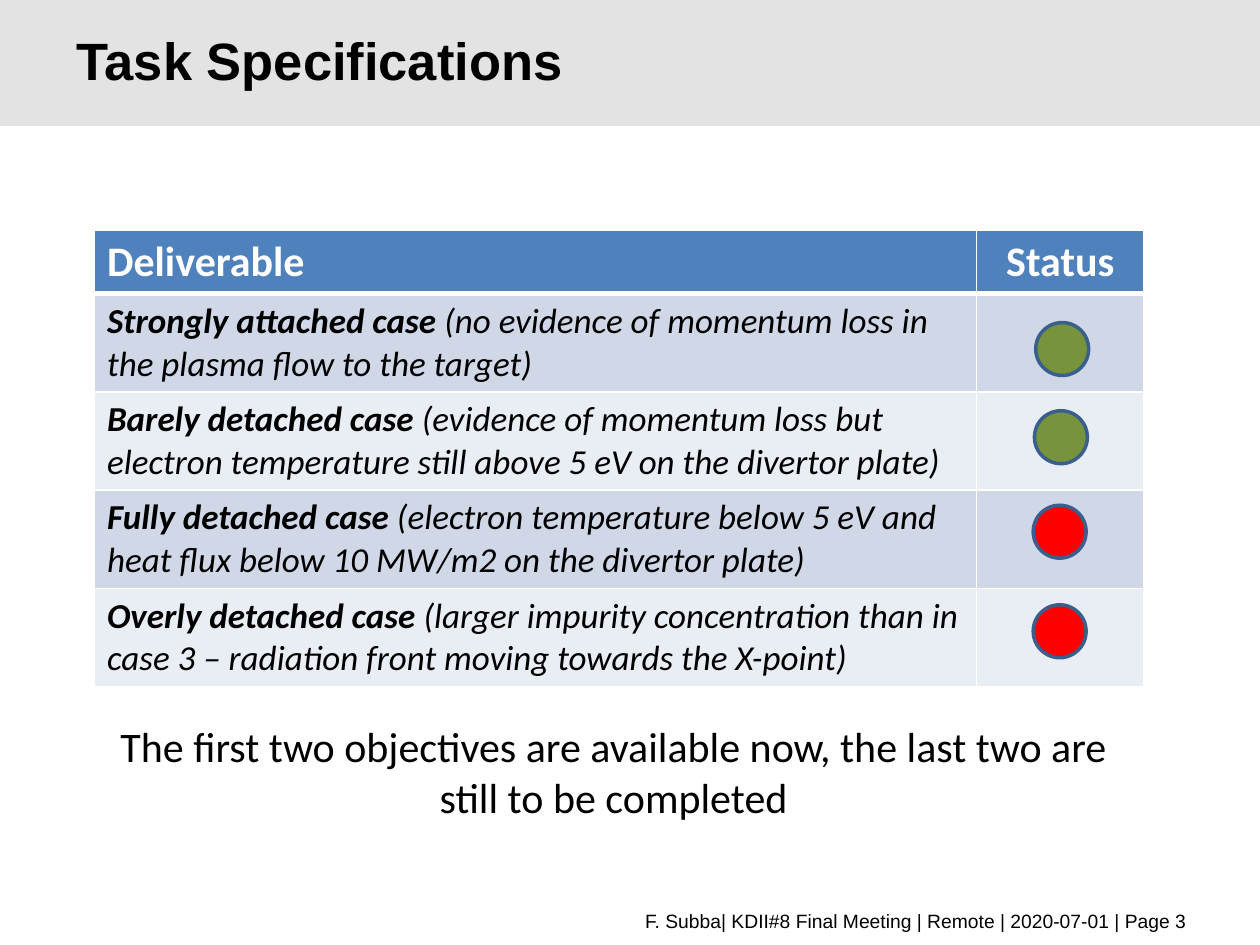
from pptx import Presentation
from pptx import util as u
from pptx.dml.color import RGBColor
from pptx.enum import shapes, text
from pptx.oxml import parse_xml
from pptx.oxml.ns import nsdecls

COLS, ROWS = 100, 75  # square grid over the slide
UNIT = u.Inches(10) // COLS

HUES = {
    "band": "E3E3E3", "ink": "000000", "white": "FFFFFF", "head": "4F81BD",
    "odd": "D0D8E8", "even": "E9EDF4", "done": "77933C", "open": "FF0000",
    "rim": "3A5F8C",
}

# Case, detail, state, and left and top of its dot from the table's corner
CASES = [
    ("Strongly attached case",
     "(no evidence of momentum loss in the plasma flow to the target)",
     "done", 74.7, 7.3),
    ("Barely detached case",
     "(evidence of momentum loss but electron temperature still above 5 eV "
     "on the divertor plate)", "done", 74.6, 14.3),
    ("Fully detached case",
     "(electron temperature below 5 eV and heat flux below 10 MW/m2 "
     "on the divertor plate)", "open", 74.5, 21.8),
    ("Overly detached case",
     "(larger impurity concentration than in case 3 – radiation front moving "
     "towards the X-point)", "open", 74.5, 29.7),
]


def span(n):
    return u.Emu(round(n * UNIT))


def hue(name):
    return RGBColor.from_string(HUES[name])


def paint(part, name):
    part.fill.solid()
    part.fill.fore_color.rgb = hue(name)


def add_run(para, words, size, face="Calibri", ink="ink", bold=False, slant=False):
    run = para.add_run()
    run.text = words
    font = run.font
    font.size, font.name = u.Pt(size), face
    font.bold, font.italic = bold, slant
    font.color.rgb = hue(ink)


def add_form(slide, kind, box, fill, rim=None):
    form = slide.shapes.add_shape(kind, *map(span, box))
    form.shadow.inherit = False
    paint(form, fill)
    if rim:
        form.line.color.rgb = hue(rim)
        form.line.width = u.Pt(2)
    else:
        form.line.fill.background()


def add_label(slide, box, words, size, face, align, anchor, bold=False):
    frame = slide.shapes.add_textbox(*map(span, box)).text_frame
    frame.word_wrap = True
    frame.vertical_anchor = anchor
    para = frame.paragraphs[0]
    para.alignment = align
    add_run(para, words, size, face, bold=bold)
    return para


def rule_cell(cell, base=1):
    """Draw white borders, with the bottom one as wide as asked."""
    props = cell._tc.get_or_add_tcPr()
    for spot, (side, width) in enumerate(zip("LRTB", (1, 1, 1, base))):
        props.insert(spot, parse_xml(
            f'<a:ln{side} {nsdecls("a")} w="{u.Pt(width)}"><a:solidFill>'
            f'<a:srgbClr val="{HUES["white"]}"/></a:solidFill></a:ln{side}>'))


def head_band(slide, box):
    x, y, w, h = box
    add_form(slide, shapes.MSO_SHAPE.RECTANGLE, box, "band")
    para = add_label(slide, (x + 5.1, y + h / 4, w - 17.5, h / 2),
                     "Task Specifications", 30, "Arial",
                     text.PP_ALIGN.LEFT, text.MSO_ANCHOR.MIDDLE, bold=True)
    para.line_spacing = u.Pt(32)


def case_table(slide, box):
    x, y, w, h = box
    top, last = 5, 13.3  # header row and status column
    grid = slide.shapes.add_table(len(CASES) + 1, 2, *map(span, box)).table
    grid.columns[0].width, grid.columns[1].width = span(w - last), span(last)

    # Header row
    grid.rows[0].height = span(top)
    for cell, words in zip(grid.rows[0].cells, ("Deliverable", "Status")):
        paint(cell, "head")
        rule_cell(cell, 3)
        add_run(cell.text_frame.paragraphs[0], words, 24, ink="white", bold=True)
    grid.cell(0, 1).text_frame.paragraphs[0].alignment = text.PP_ALIGN.CENTER

    # One row and one status dot per case
    for i, (case, detail, state, dx, dy) in enumerate(CASES, 1):
        grid.rows[i].height = span((h - top) / len(CASES))
        for cell in grid.rows[i].cells:
            paint(cell, "odd" if i % 2 else "even")
            rule_cell(cell)
        para = grid.cell(i, 0).text_frame.paragraphs[0]
        add_run(para, case, 20, bold=True, slant=True)
        add_run(para, f" {detail}", 20, slant=True)
        add_form(slide, shapes.MSO_SHAPE.OVAL, (x + dx, y + dy, 4.2, 4.2),
                 state, "rim")


def summary(slide, box):
    add_label(slide, box, "The first two objectives are available now, "
              "the last two are still to be completed", 24, "Calibri",
              text.PP_ALIGN.CENTER, text.MSO_ANCHOR.TOP)


def footer(slide, box):
    add_label(slide, box,
              "F. Subba| KDII#8 Final Meeting | Remote | 2020-07-01 | Page 3",
              11, "Arial", text.PP_ALIGN.RIGHT, text.MSO_ANCHOR.MIDDLE)


def main():
    deck = Presentation()
    deck.slide_width, deck.slide_height = span(COLS), span(ROWS)
    slide = deck.slides.add_slide(deck.slide_layouts[6])
    head_band(slide, (0, 0, COLS, 10))
    footer(slide, (5.1, 71.6, 90.1, 2.9))
    case_table(slide, (7.5, 18.3, 83.3, 36.2))
    summary(slide, (8.3, 56.7, 80.8, 9.1))
    deck.save("out.pptx")


if __name__ == "__main__":
    main()
